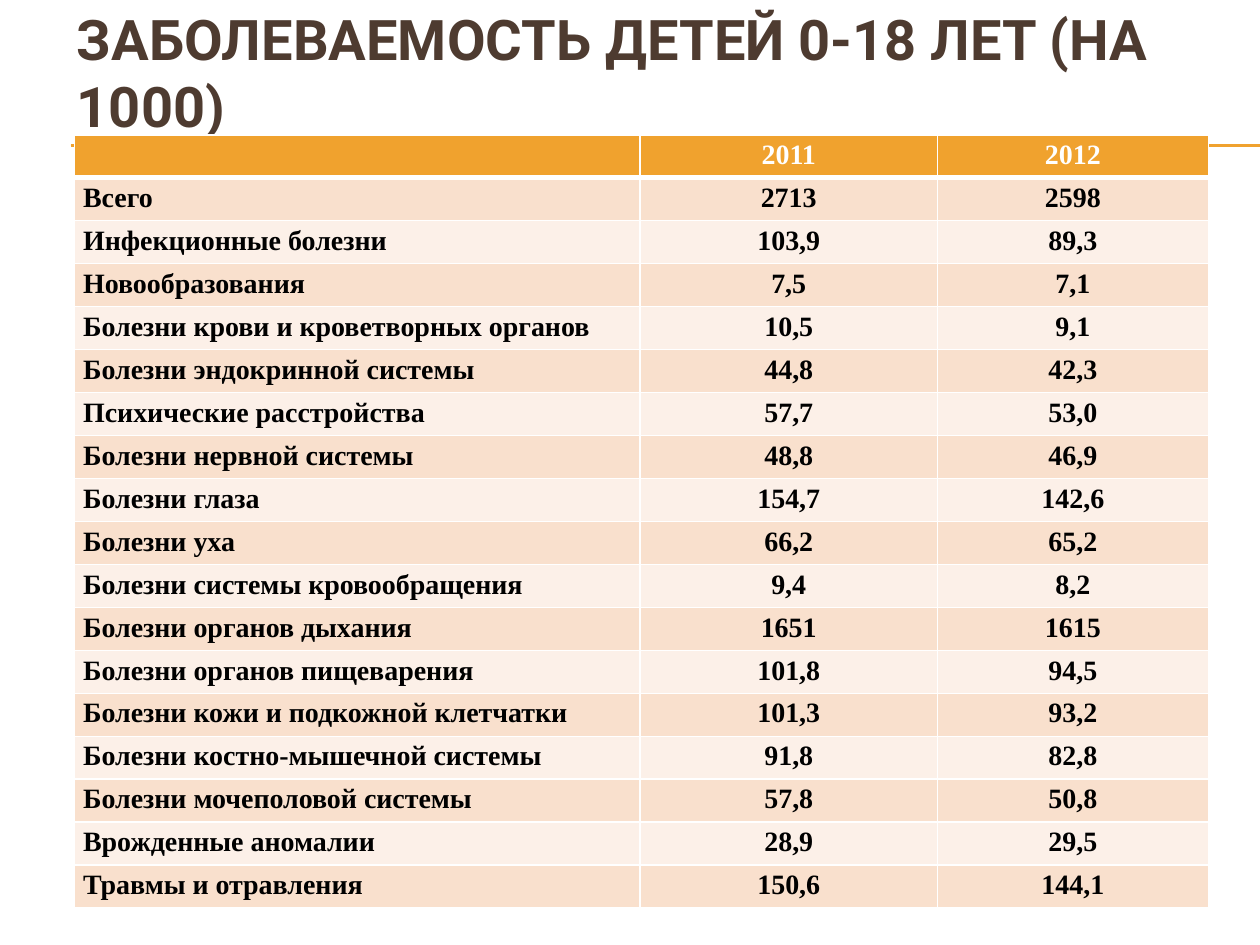
from typing import NamedTuple

from lxml.etree import SubElement
from pptx import Presentation
from pptx.dml.color import RGBColor
from pptx.enum.shapes import MSO_CONNECTOR
from pptx.enum.text import MSO_ANCHOR, MSO_AUTO_SIZE, PP_ALIGN
from pptx.oxml import parse_xml
from pptx.oxml.ns import nsdecls, qn
from pptx.util import Inches, Pt

COLORS = {
    "title": "4E3B30",
    "accent": "F0A22E",
    "odd": "F9E0CD",
    "even": "FCF0E8",
    "white": "FFFFFF",
    "black": "000000",
}
WIDTHS = (4.49, 2.36, 2.15)
HEIGHT = 6.14


class Row(NamedTuple):
    name: str
    old: str
    new: str


ROWS = [
    Row("", "2011", "2012"),
    Row("Всего", "2713", "2598"),
    Row("Инфекционные болезни", "103,9", "89,3"),
    Row("Новообразования", "7,5", "7,1"),
    Row("Болезни крови и кроветворных органов", "10,5", "9,1"),
    Row("Болезни эндокринной системы", "44,8", "42,3"),
    Row("Психические расстройства", "57,7", "53,0"),
    Row("Болезни нервной системы", "48,8", "46,9"),
    Row("Болезни глаза", "154,7", "142,6"),
    Row("Болезни уха", "66,2", "65,2"),
    Row("Болезни системы кровообращения", "9,4", "8,2"),
    Row("Болезни органов дыхания", "1651", "1615"),
    Row("Болезни органов пищеварения", "101,8", "94,5"),
    Row("Болезни кожи и подкожной клетчатки", "101,3", "93,2"),
    Row("Болезни костно-мышечной системы", "91,8", "82,8"),
    Row("Болезни мочеполовой системы", "57,8", "50,8"),
    Row("Врожденные аномалии", "28,9", "29,5"),
    Row("Травмы и отравления", "150,6", "144,1"),
]


def color(key: str) -> RGBColor:
    return RGBColor.from_string(COLORS[key])


def add_run(para, text: str, face: str, size: int, key: str) -> None:
    run = para.add_run()
    run.text = text
    run.font.name = face
    run.font.size = Pt(size)
    run.font.bold = True
    run.font.color.rgb = color(key)


def add_rule(slide, top: float) -> None:
    rule = slide.shapes.add_connector(
        MSO_CONNECTOR.STRAIGHT, Inches(0.56), Inches(top), Inches(10), Inches(top))
    rule.line.color.rgb = color("accent")
    rule.line.width = Pt(0.75)
    SubElement(rule._element.spPr, qn("a:effectLst"))


def add_title(slide, text: str) -> None:
    title = slide.shapes.title
    title.left, title.top = Inches(0.51), Inches(0.3)
    title.width, title.height = Inches(9.49), Inches(0.54)
    frame = title.text_frame
    frame.word_wrap = True
    frame.auto_size = MSO_AUTO_SIZE.NONE
    frame.vertical_anchor = MSO_ANCHOR.MIDDLE
    para = frame.paragraphs[0]
    para.alignment = PP_ALIGN.LEFT
    add_run(para, text, "Roboto", 32, "title")


def set_edges(cell, row: int) -> None:
    # The line below the header is thicker
    points = {"L": 1, "R": 1, "T": 3 if row == 1 else 1, "B": 3 if row == 0 else 1}
    for spot, (side, width) in enumerate(points.items()):
        edge = parse_xml(
            f'<a:ln{side} {nsdecls("a")} w="{Pt(width)}"><a:solidFill>'
            f'<a:srgbClr val="{COLORS["white"]}"/></a:solidFill></a:ln{side}>')
        cell._tc.get_or_add_tcPr().insert(spot, edge)


def fill_cell(cell, text: str, row: int, col: int) -> None:
    cell.margin_left = cell.margin_right = Inches(0.07)
    cell.margin_top = cell.margin_bottom = 0
    shade = "accent" if row == 0 else "odd" if row % 2 else "even"
    cell.fill.solid()
    cell.fill.fore_color.rgb = color(shade)
    set_edges(cell, row)
    if text:
        para = cell.text_frame.paragraphs[0]
        para.alignment = PP_ALIGN.CENTER if col else PP_ALIGN.LEFT
        para.line_spacing = 1.15
        add_run(para, text, "Times New Roman", 16, "black" if row else "white")


def add_grid(slide, rows: list[Row]) -> None:
    grid = slide.shapes.add_table(
        len(rows), len(WIDTHS), Inches(0.59), Inches(1.07),
        Inches(sum(WIDTHS)), Inches(HEIGHT)).table
    for col, width in enumerate(WIDTHS):
        grid.columns[col].width = Inches(width)
    for row, item in enumerate(rows):
        grid.rows[row].height = Inches(HEIGHT / len(rows))
        for col, text in enumerate(item):
            fill_cell(grid.cell(row, col), text, row, col)


def main() -> None:
    deck = Presentation()
    deck.slide_width, deck.slide_height = Inches(10), Inches(7.5)
    slide = deck.slides.add_slide(deck.slide_layouts[5])

    # Double rule behind the table
    for top in (1.15, 1.16):
        add_rule(slide, top)

    # Title and table
    add_title(slide, "ЗАБОЛЕВАЕМОСТЬ ДЕТЕЙ 0-18 ЛЕТ (НА 1000)")
    add_grid(slide, ROWS)
    deck.save("out.pptx")


if __name__ == "__main__":
    main()
